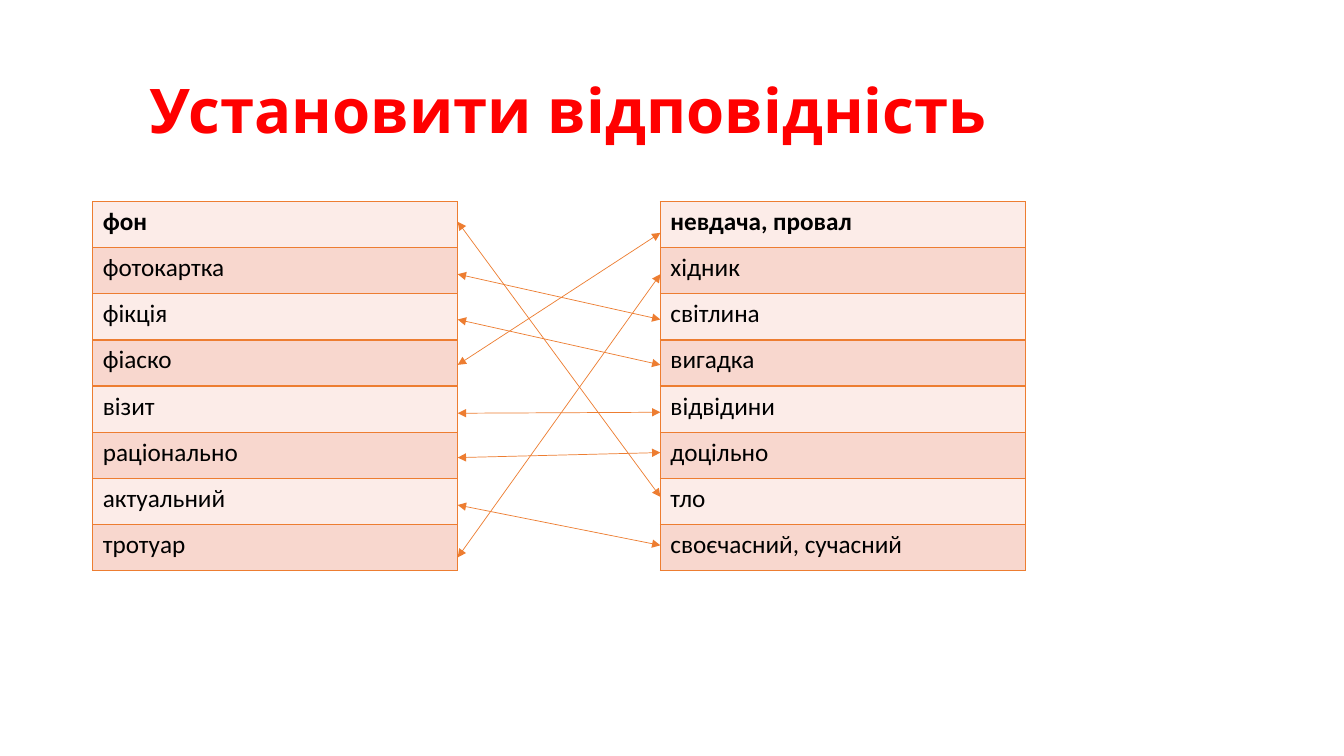
from dataclasses import dataclass

from lxml import etree
from pptx import Presentation
from pptx.dml.color import RGBColor
from pptx.enum import shapes, text
from pptx.oxml import ns
from pptx.util import Inches, Pt


@dataclass(frozen=True)
class Theme:
    title_color: str = "FF0000"
    word_color: str = "000000"
    accent: str = "ED7D31"
    bands: tuple = ("FCECE8", "F8D7CE")
    title_font: str = "Karla"
    word_font: str = "Calibri"
    title_size: int = 44
    word_size: int = 18
    border_width: float = 1
    arrow_width: float = 0.5


THEME = Theme()

LOANWORDS = ["фон", "фотокартка", "фікція", "фіаско",
             "візит", "раціонально", "актуальний", "тротуар"]
MEANINGS = ["невдача, провал", "хідник", "світлина", "вигадка",
            "відвідини", "доцільно", "тло", "своєчасний, сучасний"]
# Heights at which each loanword's arrow leaves it and meets its meaning.
MATCHES = [(2.2, 4.93), (2.72, 3.17), (3.17, 3.62), (3.62, 2.31),
           (4.1, 4.09), (4.54, 4.49), (5.01, 5.41), (5.53, 2.72)]

LOANWORDS_LEFT, MEANINGS_LEFT = 0.92, 6.55
LIST_TOP, LIST_WIDTH, LIST_HEIGHT = 2, 3.62, 3.66


def add_run(paragraph, words, font, size, color, bold):
    run = paragraph.add_run()
    run.text = words
    run.font.name = font
    run.font.size = Pt(size)
    run.font.bold = bold
    run.font.color.rgb = RGBColor.from_string(color)


def add_title(slide, words):
    title = slide.shapes.title
    title.left, title.top = Inches(1.38), Inches(0.4)
    title.width, title.height = Inches(11.5), Inches(1.45)
    frame = title.text_frame
    frame.vertical_anchor = text.MSO_ANCHOR.MIDDLE
    frame.auto_size = text.MSO_AUTO_SIZE.NONE
    paragraph = frame.paragraphs[0]
    paragraph.alignment = text.PP_ALIGN.LEFT
    paragraph.line_spacing = 0.9
    add_run(paragraph, words, THEME.title_font, THEME.title_size,
            THEME.title_color, True)


def outline_cell(cell):
    """Draw the accent border on all four sides, ahead of the cell's fill."""
    properties = cell._tc.get_or_add_tcPr()
    for position, side in enumerate(("lnL", "lnR", "lnT", "lnB")):
        border = etree.Element(ns.qn(f"a:{side}"), w=str(Pt(THEME.border_width)))
        fill = etree.SubElement(border, ns.qn("a:solidFill"))
        etree.SubElement(fill, ns.qn("a:srgbClr"), val=THEME.accent)
        properties.insert(position, border)


def add_word_list(slide, left, words):
    """Add a one-column banded table whose first word is bold."""
    table = slide.shapes.add_table(
        len(words), 1, Inches(left), Inches(LIST_TOP),
        Inches(LIST_WIDTH), Inches(LIST_HEIGHT)).table
    for row, word in enumerate(words):
        cell = table.cell(row, 0)
        cell.fill.solid()
        cell.fill.fore_color.rgb = RGBColor.from_string(THEME.bands[row % 2])
        outline_cell(cell)
        add_run(cell.text_frame.paragraphs[0], word, THEME.word_font,
                THEME.word_size, THEME.word_color, row == 0)


def add_match_arrow(slide, start, end):
    arrow = slide.shapes.add_connector(
        shapes.MSO_CONNECTOR.STRAIGHT,
        Inches(LOANWORDS_LEFT + LIST_WIDTH), Inches(start),
        Inches(MEANINGS_LEFT), Inches(end))
    arrow.line.color.rgb = RGBColor.from_string(THEME.accent)
    arrow.line.width = Pt(THEME.arrow_width)
    outline = arrow.line._get_or_add_ln()
    for tip in ("headEnd", "tailEnd"):
        etree.SubElement(outline, ns.qn(f"a:{tip}"), type="triangle")
    etree.SubElement(arrow._element.spPr, ns.qn("a:effectLst"))


def main():
    deck = Presentation()
    deck.slide_width, deck.slide_height = Inches(13.33), Inches(7.5)
    slide = deck.slides.add_slide(deck.slide_layouts.get_by_name("Title Only"))
    add_title(slide, "Установити відповідність")
    add_word_list(slide, LOANWORDS_LEFT, LOANWORDS)
    add_word_list(slide, MEANINGS_LEFT, MEANINGS)
    for start, end in MATCHES:
        add_match_arrow(slide, start, end)
    deck.save("out.pptx")


if __name__ == "__main__":
    main()
